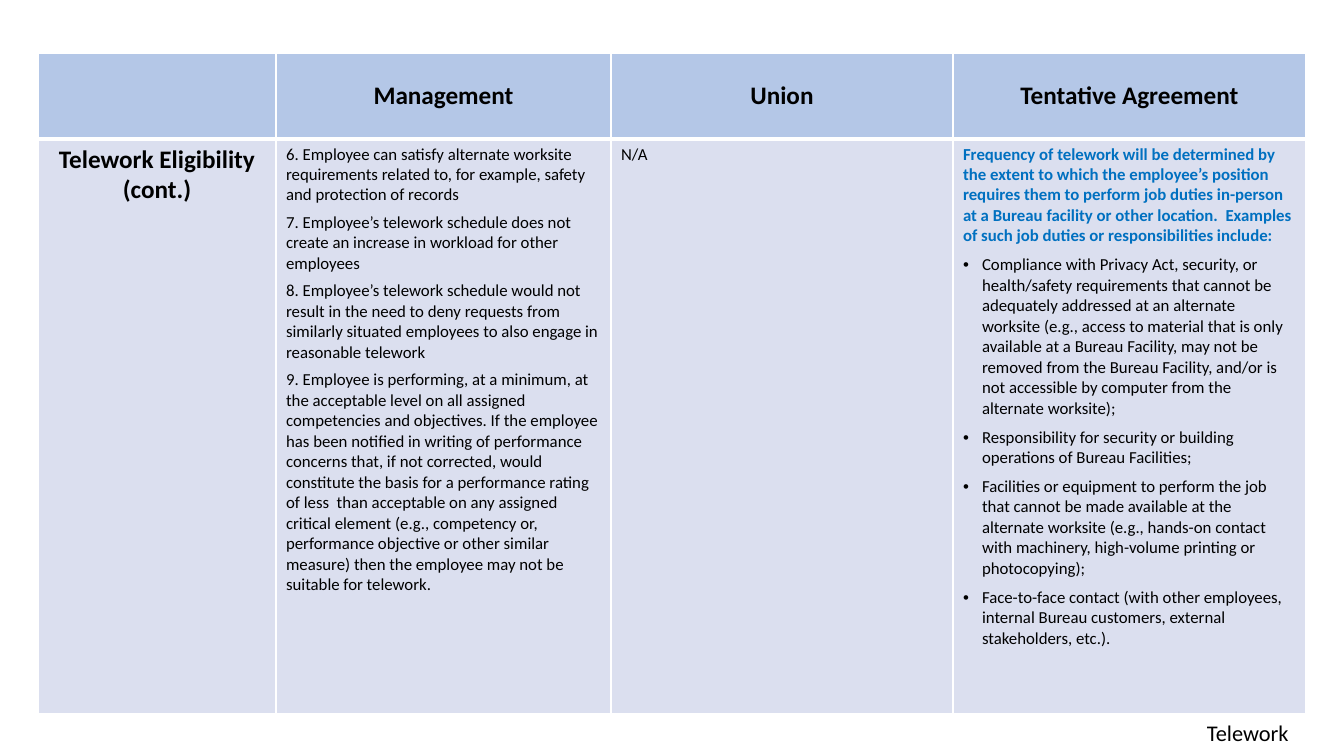
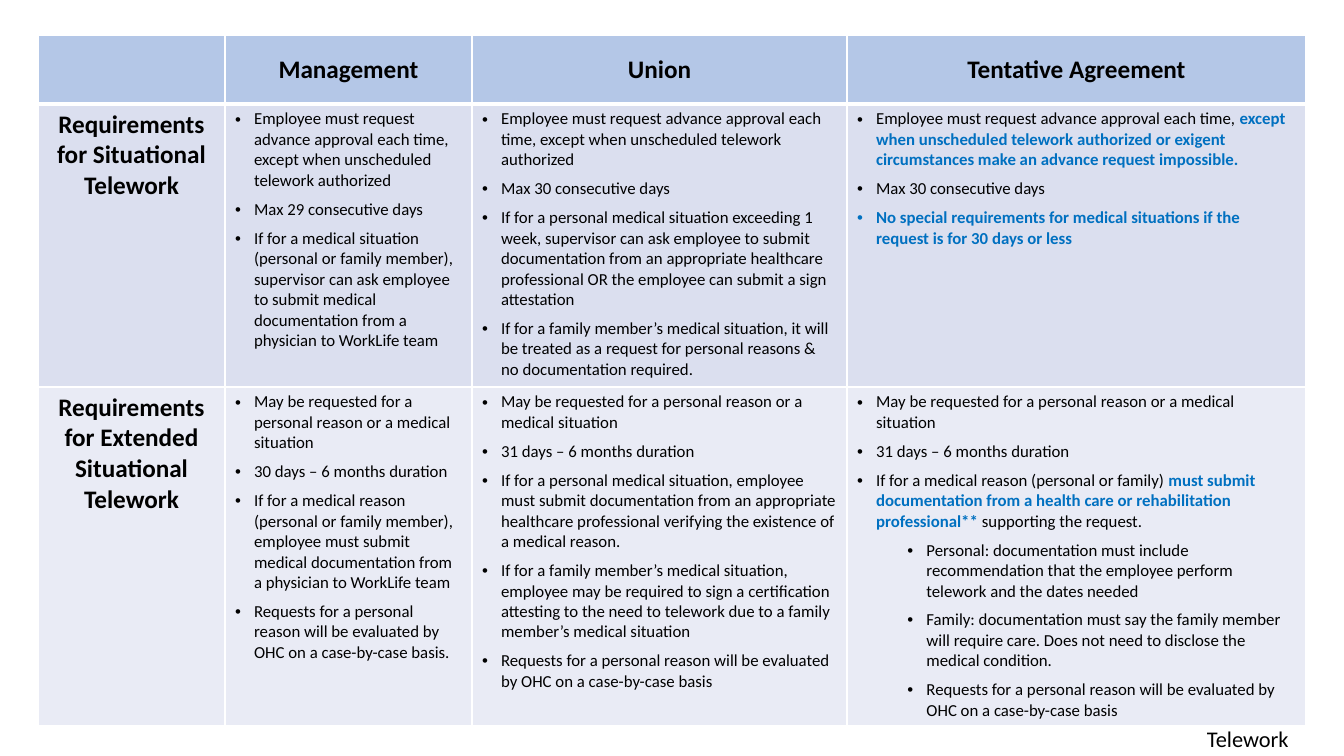
from dataclasses import dataclass

import pptx
import pptx.dml.color
import pptx.enum.text
import pptx.oxml
import pptx.oxml.ns
import pptx.util

EMU_PER_PX = 914400 / 100.8
SLIDE_WIDTH, SLIDE_HEIGHT = 1344, 756
BLANK_LAYOUT = 6


@dataclass(frozen=True)
class Theme:
    font: str = "Calibri"
    text: str = "000000"
    highlight: str = "0070C0"
    border: str = "FFFFFF"
    header_fill: str = "B4C7E7"
    row_fills: tuple = (("CFD5EA", 74), ("E9EBF5", 100))
    heading_size: int = 18
    body_size: int = 12
    footer_size: int = 16
    thin_line: int = 1
    thick_line: int = 3


THEME = Theme()


@dataclass(frozen=True)
class Box:
    left: int
    top: int
    width: int
    height: int


@dataclass(frozen=True)
class Entry:
    """One paragraph; each | in the text switches the highlight on or off."""
    text: str
    bullet: bool = True
    level: int = 0
    space_after: int = 6


def plain(text, space_after=5):
    return Entry(text, bullet=False, space_after=space_after)


def bullets(*texts, level=0):
    return [Entry(text, level=level) for text in texts]


def px(length):
    return pptx.util.Emu(round(length * EMU_PER_PX))


def rgb(colour):
    return pptx.dml.color.RGBColor.from_string(colour)


def drawing_xml(tag, attributes="", content=""):
    namespace = pptx.oxml.ns.nsdecls("a")
    return pptx.oxml.parse_xml(f"<a:{tag} {namespace} {attributes}>{content}</a:{tag}>")


def style_font(font, size, bold=False, colour=THEME.text):
    font.name = THEME.font
    font.size = pptx.util.Pt(size)
    font.bold = bold
    font.color.rgb = rgb(colour)


def style_cell(cell, fill, opacity=100, top=THEME.thin_line, bottom=THEME.thin_line):
    """Draw the four borders, then the fill, in the order the schema asks for."""
    properties = cell._tc.get_or_add_tcPr()
    widths = {"lnL": THEME.thin_line, "lnR": THEME.thin_line, "lnT": top, "lnB": bottom}
    line_fill = f'<a:solidFill><a:srgbClr val="{THEME.border}"/></a:solidFill>'
    for side, width in widths.items():
        properties.append(drawing_xml(side, f'w="{pptx.util.Pt(width)}"', line_fill))
    cell.fill.solid()
    cell.fill.fore_color.rgb = rgb(fill)
    if opacity < 100:
        colour = properties.find(pptx.oxml.ns.qn("a:solidFill"))[0]
        colour.append(drawing_xml("alpha", f'val="{opacity * 1000}"'))


def write_heading(cell, text):
    paragraph = cell.text_frame.paragraphs[0]
    paragraph.text = text
    paragraph.alignment = pptx.enum.text.PP_ALIGN.CENTER
    style_font(paragraph.font, THEME.heading_size, bold=True)


def add_bullet(paragraph, level):
    indent = px(19)
    properties = paragraph._p.get_or_add_pPr()
    properties.set("marL", str(indent + level * pptx.util.Inches(0.5)))
    properties.set("indent", str(-indent))
    properties.append(drawing_xml("buFont", 'typeface="Arial"'))
    properties.append(drawing_xml("buChar", 'char="•"'))


def write_entries(cell, entries):
    frame = cell.text_frame
    for index, entry in enumerate(entries):
        paragraph = frame.add_paragraph() if index else frame.paragraphs[0]
        if entry.bullet:
            paragraph.level = entry.level
            add_bullet(paragraph, entry.level)
        paragraph.space_after = pptx.util.Pt(entry.space_after)
        style_font(paragraph.font, THEME.body_size)
        for part, text in enumerate(entry.text.split("|")):
            if text:
                run = paragraph.add_run()
                run.text = text
                if part % 2:
                    style_font(run.font, THEME.body_size, True, THEME.highlight)


def add_comparison_table(slide, box, column_widths, row_heights, topics):
    """Fill the box with a header row and one row per (topic, three positions)."""
    headings = ("", "Management", "Union", "Tentative Agreement")
    frame = slide.shapes.add_table(len(topics) + 1, len(headings), px(box.left),
                                   px(box.top), px(box.width), px(box.height))
    table = frame.table
    table.horz_banding = False
    for column, width in zip(table.columns, column_widths):
        column.width = px(width)
    for row, height in zip(table.rows, row_heights):
        row.height = px(height)

    for cell, heading in zip(table.rows[0].cells, headings):
        style_cell(cell, THEME.header_fill, bottom=THEME.thick_line)
        cell.vertical_anchor = pptx.enum.text.MSO_ANCHOR.MIDDLE
        if heading:
            write_heading(cell, heading)

    for index, (topic, positions) in enumerate(topics):
        cells = list(table.rows[index + 1].cells)
        fill, opacity = THEME.row_fills[index % len(THEME.row_fills)]
        top = THEME.thin_line if index else THEME.thick_line
        for cell in cells:
            style_cell(cell, fill, opacity, top=top)
        write_heading(cells[0], topic)
        for cell, entries in zip(cells[1:], positions):
            write_entries(cell, entries)


def add_footer(slide, box):
    shape = slide.shapes.add_textbox(px(box.left), px(box.top), px(box.width), px(box.height))
    shape.text_frame.word_wrap = True
    paragraph = shape.text_frame.paragraphs[0]
    paragraph.text = "Telework"
    style_font(paragraph.font, THEME.footer_size)


def add_comparison_slide(presentation, top, column_widths, row_heights, topics, footer_top):
    slide = presentation.slides.add_slide(presentation.slide_layouts[BLANK_LAYOUT])
    box = Box(38, top, sum(column_widths), sum(row_heights))
    add_comparison_table(slide, box, column_widths, row_heights, topics)
    add_footer(slide, Box(1197, footer_top, 109, 37))


ELIGIBILITY = [
    ("Telework Eligibility (cont.)", (
        [
            plain("6. Employee can satisfy alternate worksite requirements related to, for "
                  "example, safety and protection of records"),
            plain("7. Employee’s telework schedule does not create an increase in workload "
                  "for other employees"),
            plain("8. Employee’s telework schedule would not result in the need to deny "
                  "requests from similarly situated employees to also engage in reasonable "
                  "telework"),
            plain("9. Employee is performing, at a minimum, at the acceptable level on all "
                  "assigned competencies and objectives. If the employee has been notified in "
                  "writing of performance concerns that, if not corrected, would constitute "
                  "the basis for a performance rating of less  than acceptable on any assigned "
                  "critical element (e.g., competency or, performance objective or other "
                  "similar measure) then the employee may not be suitable for telework."),
        ],
        [plain("N/A", space_after=0)],
        [
            plain("|Frequency of telework will be determined by the extent to which the "
                  "employee’s position requires them to perform job duties in-person at a "
                  "Bureau facility or other location.  Examples of such job duties or "
                  "responsibilities include:", space_after=6),
            *bullets(
                "Compliance with Privacy Act, security, or health/safety requirements that "
                "cannot be adequately addressed at an alternate worksite (e.g., access to "
                "material that is only available at a Bureau Facility, may not be removed from "
                "the Bureau Facility, and/or is not accessible by computer from the alternate "
                "worksite);",
                "Responsibility for security or building operations of Bureau Facilities;",
                "Facilities or equipment to perform the job that cannot be made available at "
                "the alternate worksite (e.g., hands-on contact with machinery, high-volume "
                "printing or photocopying);",
                "Face-to-face contact (with other employees, internal Bureau customers, "
                "external stakeholders, etc.).",
            ),
        ],
    )),
]

ADVANCE_APPROVAL = "Employee must request advance approval each time, "
UNSCHEDULED = "except when unscheduled telework authorized"
MAX_30_DAYS = "Max 30 consecutive days"
REASONS = "May be requested for a personal reason or a medical situation"
EXTENDED_DURATION = "31 days – 6 months duration"
CASE_BY_CASE = "Requests for a personal reason will be evaluated by OHC on a case-by-case basis"

REQUIREMENTS = [
    ("Requirements for Situational Telework", (
        bullets(
            ADVANCE_APPROVAL + UNSCHEDULED,
            "Max 29 consecutive days",
            "If for a medical situation (personal or family member), supervisor can ask "
            "employee to submit medical documentation from a physician to WorkLife team",
        ),
        bullets(
            ADVANCE_APPROVAL + UNSCHEDULED,
            MAX_30_DAYS,
            "If for a personal medical situation exceeding 1 week, supervisor can ask employee "
            "to submit documentation from an appropriate healthcare professional OR the "
            "employee can submit a sign attestation",
            "If for a family member’s medical situation, it will be treated as a request for "
            "personal reasons & no documentation required.",
        ),
        bullets(
            f"{ADVANCE_APPROVAL}|{UNSCHEDULED} or exigent circumstances make an advance "
            "request impossible.",
            MAX_30_DAYS,
            "|No special requirements for medical situations if the request is for 30 days or "
            "less",
        ),
    )),
    ("Requirements for Extended Situational Telework", (
        bullets(
            REASONS,
            "30 days – 6 months duration",
            "If for a medical reason (personal or family member), employee must submit medical "
            "documentation from a physician to WorkLife team",
            CASE_BY_CASE + ".",
        ),
        bullets(
            REASONS,
            EXTENDED_DURATION,
            "If for a personal medical situation, employee must submit documentation from an "
            "appropriate healthcare professional verifying the existence of a medical reason.",
            "If for a family member’s medical situation, employee may be required to sign a "
            "certification attesting to the need to telework due to a family member’s medical "
            "situation",
            CASE_BY_CASE,
        ),
        bullets(
            REASONS,
            EXTENDED_DURATION,
            "If for a medical reason (personal or family) |must submit documentation from a "
            "health care or rehabilitation professional** |supporting the request.",
        ) + bullets(
            "Personal: documentation must include recommendation that the employee perform "
            "telework and the dates needed",
            "Family: documentation must say the family member will require care. Does not need "
            "to disclose the medical condition.",
            CASE_BY_CASE,
            level=1,
        ),
    )),
]


def main():
    presentation = pptx.Presentation()
    presentation.slide_width = px(SLIDE_WIDTH)
    presentation.slide_height = px(SLIDE_HEIGHT)
    add_comparison_slide(presentation, 53, (238, 335, 342, 353), (86, 575),
                         ELIGIBILITY, footer_top=714)
    add_comparison_slide(presentation, 35, (187, 247, 375, 459), (69, 283, 339),
                         REQUIREMENTS, footer_top=720)
    presentation.save("out.pptx")


if __name__ == "__main__":
    main()
